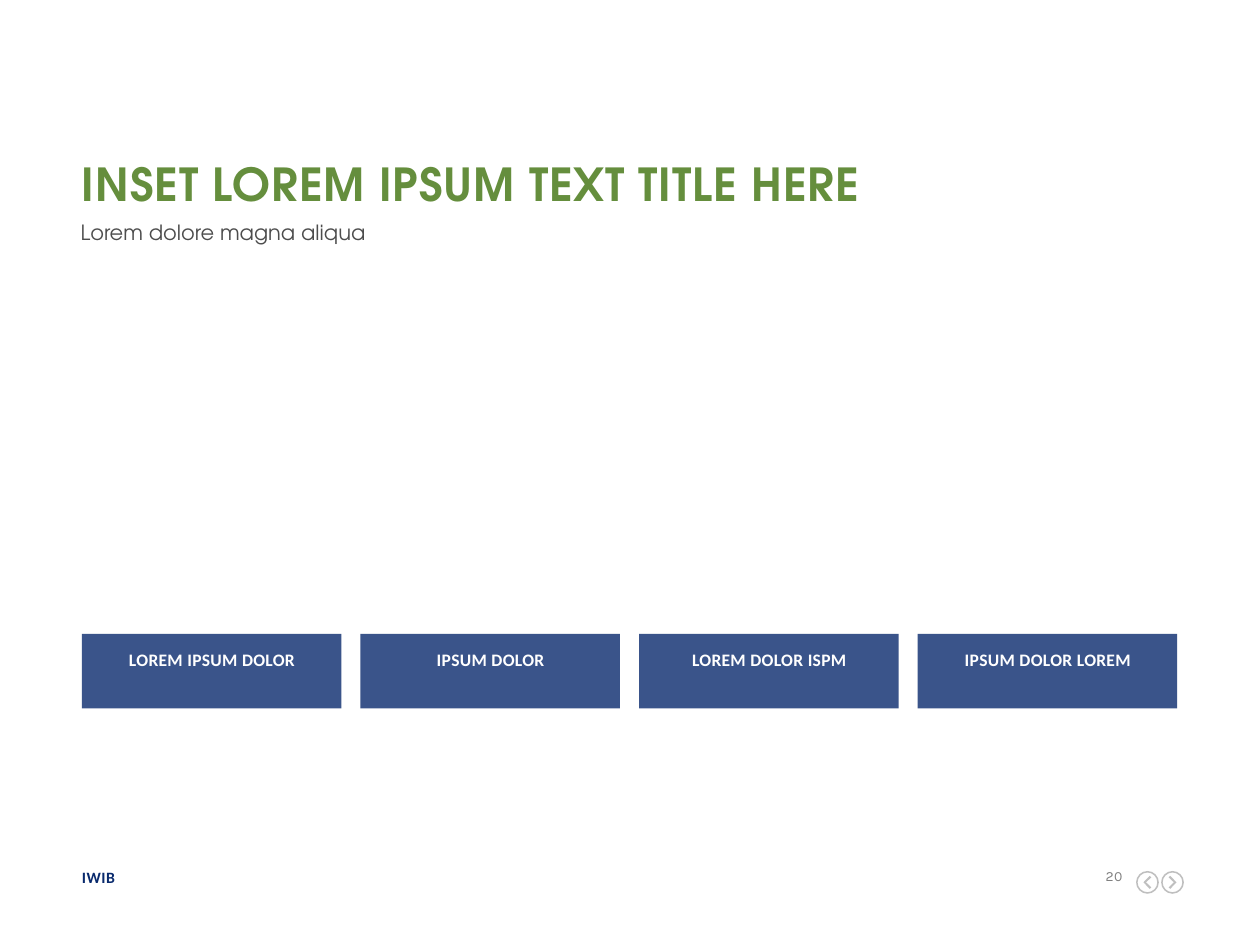
from math import cos, pi, sin

from lxml.etree import SubElement
from pptx import Presentation
from pptx.dml.color import RGBColor
from pptx.enum.shapes import MSO_SHAPE
from pptx.enum.text import MSO_ANCHOR, PP_ALIGN
from pptx.oxml.ns import qn
from pptx.util import Pt

NAVY, GREEN, GREY, SILVER, WHITE = "092A6D", "658E3D", "4D4D4D", "BFBFBF", "FFFFFF"
LABELS = ["LOREM IPSUM DOLOR", "IPSUM DOLOR", "LOREM DOLOR ISPM", "IPSUM DOLOR LOREM"]
LEFT, PANEL_TOP, PANEL_WIDTH, PANEL_STEP = 46.8, 362.2, 148.3, 159.2
LABEL_WIDTH = 108.8


def color(value):
    return RGBColor.from_string(value)


def circle(radius, direction=1, steps=16):
    angles = [direction * 2 * pi * step / steps for step in range(steps)]
    return [(radius * cos(angle), radius * sin(angle)) for angle in angles]


class SlideBuilder:
    """Holds the style and the current slide and adds each kind of element."""

    def __init__(self, page, display="TeX Gyre Adventor", label="Calibri", number="Karla"):
        self.page = page
        self.display, self.label, self.number = display, label, number

    def text(self, words, left, top, width, height, font, size, fill,
             bold=False, align=PP_ALIGN.LEFT, spacing=0, line=None):
        box = self.page.shapes.add_textbox(Pt(left), Pt(top), Pt(width), Pt(height))
        frame = box.text_frame
        frame.word_wrap = True
        frame.vertical_anchor = MSO_ANCHOR.TOP
        frame.margin_left = frame.margin_top = frame.margin_right = frame.margin_bottom = 0
        para = frame.paragraphs[0]
        para.alignment = align
        if line:
            para.line_spacing = Pt(line)
        span = para.add_run()
        span.text = words
        span.font.name, span.font.size, span.font.bold = font, Pt(size), bold
        span.font.color.rgb = color(fill)
        if spacing:
            span.font._element.set("spc", str(round(spacing * 100)))

    def paint(self, shape, fill, opacity=100):
        shape.shadow.inherit = False
        shape.fill.solid()
        shape.fill.fore_color.rgb = color(fill)
        shape.line.fill.background()
        if opacity < 100:
            tint = shape._element.spPr.find(qn("a:solidFill"))[0]
            SubElement(tint, qn("a:alpha")).set("val", str(opacity * 1000))

    def panel(self, left, top, width, height, fill, opacity):
        shape = self.page.shapes.add_shape(
            MSO_SHAPE.RECTANGLE, Pt(left), Pt(top), Pt(width), Pt(height))
        self.paint(shape, fill, opacity)

    def arrow_button(self, center_x, center_y, direction, fill):
        chevron = [(-2.2, -2.9), (0.8, 0), (-2.2, 2.9), (-1.3, 3.7), (2.3, 0), (-1.3, -3.7)]
        arrow = [(direction * x, y) for x, y in chevron]
        builder = None
        for contour in (circle(6.5), circle(5.6, -1), arrow):
            points = [(Pt(center_x + x), Pt(center_y + y)) for x, y in contour]
            if builder is None:
                builder = self.page.shapes.build_freeform(*points[0])
            else:
                builder.move_to(*points[0])
            builder.add_line_segments(points[1:], close=True)
        self.paint(builder.convert_to_shape(), fill)


def main():
    deck = Presentation()
    deck.slide_width, deck.slide_height = Pt(720), Pt(540)
    slide = SlideBuilder(deck.slides.add_slide(deck.slide_layouts[6]))

    slide.text("IWIB", LEFT, 496.1, 140.4, 10.8, slide.label, 9, NAVY, bold=True, spacing=0.3)
    slide.text("20", 625, 495.7, 16.5, 9.4, slide.number, 8, "808080",
               align=PP_ALIGN.RIGHT, spacing=0.3)
    slide.arrow_button(670, 504.2, 1, SILVER)
    slide.arrow_button(655.7, 504.2, -1, SILVER)

    lefts = [LEFT + index * PANEL_STEP for index in range(len(LABELS))]
    for left in lefts:
        slide.panel(left, PANEL_TOP, PANEL_WIDTH, 42.7, NAVY, 80)
    for left, label in zip(lefts, LABELS):
        slide.text(label, left + (PANEL_WIDTH - LABEL_WIDTH) / 2 + 0.2, 368.8, LABEL_WIDTH, 13,
                   slide.label, 10, WHITE, bold=True, align=PP_ALIGN.CENTER,
                   spacing=0.2, line=14)

    slide.text("INSET LOREM IPSUM TEXT TITLE HERE", LEFT, 89.3, 626.4, 24.5,
               slide.display, 26, GREEN, bold=True, spacing=0.5)
    slide.text("Lorem dolore magna aliqua", 46.1, 127.8, 626.4, 30.2,
               slide.display, 12, GREY, line=12)
    deck.save("out.pptx")


if __name__ == "__main__":
    main()
